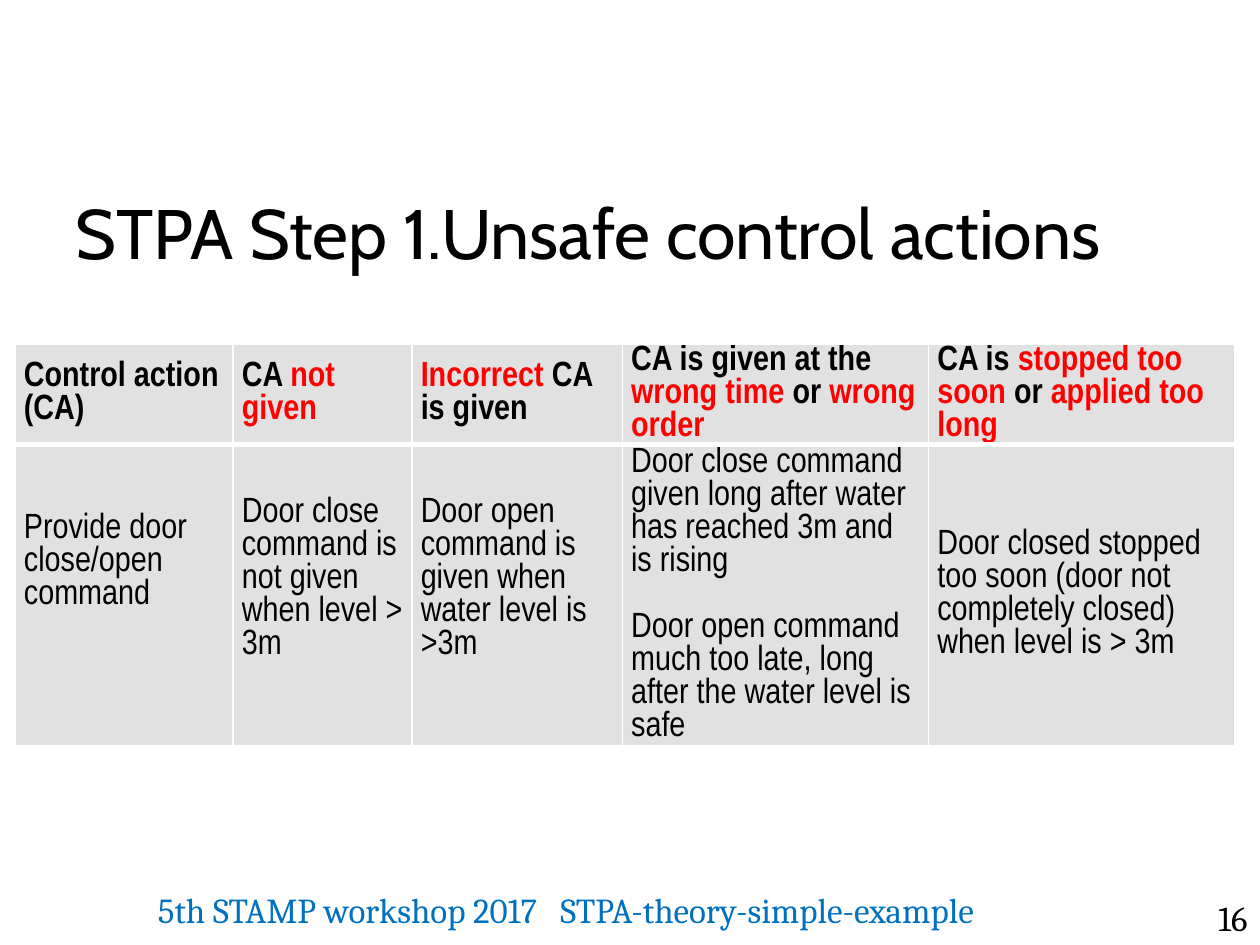
from lxml import etree
from pptx import Presentation
from pptx import util as u
from pptx.dml.color import RGBColor
from pptx.enum import text
from pptx.oxml import ns

COLORS = {"text": "000000", "alert": "FF0000", "cell": "D9D9D9", "border": "FFFFFF", "footer": "0070C0"}
LINE = 0.26


def style_run(run, font, size, color, bold=False):
    run.font.name = font
    run.font.size = u.Pt(size)
    run.font.bold = bold
    run.font.color.rgb = RGBColor.from_string(COLORS[color])


def add_border(properties, position, side, width):
    line = etree.Element(ns.qn(f"a:ln{side}"), w=str(u.Pt(width)))
    fill = etree.SubElement(line, ns.qn("a:solidFill"))
    etree.SubElement(fill, ns.qn("a:srgbClr"), val=COLORS["border"])
    properties.insert(position, line)


presentation = Presentation()
presentation.slide_width = u.Inches(10)
presentation.slide_height = u.Inches(7.5)
slide = presentation.slides.add_slide(presentation.slide_layouts[5])

title = slide.shapes.title
title.left, title.top = u.Inches(0.5), u.Inches(1.25)
title.width, title.height = u.Inches(9), u.Inches(1.17)
title.text_frame.text = "STPA Step 1.Unsafe control actions"
title.text_frame.vertical_anchor = text.MSO_ANCHOR.MIDDLE
title.text_frame.paragraphs[0].alignment = text.PP_ALIGN.LEFT
style_run(title.text_frame.paragraphs[0].runs[0], "Cabin", 40, "text")

headers = [
    [("Control action (CA)", "text")],
    [("CA ", "text"), ("not given", "alert")],
    [("Incorrect ", "alert"), ("CA is given", "text")],
    [("CA is given at the ", "text"), ("wrong time ", "alert"), ("or ", "text"), ("wrong order", "alert")],
    [("CA is ", "text"), ("stopped too soon", "alert"), (" or ", "text"), ("applied too long", "alert")],
]
actions = [
    ["Provide door close/open command"],
    ["Door close command is not given when level > 3m"],
    ["Door open command is given when water level is >3m"],
    ["Door close command given long after water has reached 3m and is rising",
     "Door open command much too late, long after the water level is safe"],
    ["Door closed stopped too soon (door not completely closed) when level is > 3m"],
]
table_rows = [
    [[header] for header in headers],
    [[[(line, "text")] for line in action] for action in actions],
]
column_widths = [1.73, 1.42, 1.67, 2.43, 2.43]
row_heights = [0.8, 2.39]
lines_above = [0, 0, 1, 0, 0]
lines_below = [2, 1, 2, 0, 0]

frame = slide.shapes.add_table(2, 5, u.Inches(0.12), u.Inches(2.73),
                               u.Inches(sum(column_widths)), u.Inches(sum(row_heights)))
table = frame.table
table.horz_banding = False
for column, width in zip(table.columns, column_widths):
    column.width = u.Inches(width)

for row_index, row in enumerate(table_rows):
    is_header = row_index == 0
    table.rows[row_index].height = u.Inches(row_heights[row_index])
    for column_index, paragraphs in enumerate(row):
        cell = table.cell(row_index, column_index)
        cell.vertical_anchor = text.MSO_ANCHOR.MIDDLE
        cell.margin_left = cell.margin_right = u.Inches(0.07)
        cell.margin_top = u.Inches(0 if is_header else lines_above[column_index] * LINE)
        cell.margin_bottom = u.Inches(0 if is_header else lines_below[column_index] * LINE)
        cell.fill.solid()
        cell.fill.fore_color.rgb = RGBColor.from_string(COLORS["cell"])
        properties = cell._tc.tcPr
        etree.SubElement(properties.find(".//" + ns.qn("a:srgbClr")), ns.qn("a:alpha"), val="79000")
        border_widths = {"L": 1, "R": 1, "T": 1 if is_header else 3, "B": 3 if is_header else 1}
        for position, (side, width) in enumerate(border_widths.items()):
            add_border(properties, position, side, width)
        for paragraph_index, runs in enumerate(paragraphs):
            if paragraph_index == 0:
                paragraph = cell.text_frame.paragraphs[0]
            else:
                paragraph = cell.text_frame.add_paragraph()
                paragraph.space_before = u.Inches(LINE)
            for content, color in runs:
                run = paragraph.add_run()
                run.text = content
                style_run(run, "Arial Narrow", 20, color, is_header)

footers = [
    ((9.17, 7.1, 0.83, 0.4), ["16"], "text", text.MSO_ANCHOR.BOTTOM),
    ((-0.83, 7, 8.66, 0.5), ["5th STAMP workshop 2017", " ", "STPA-theory-simple-example"],
     "footer", text.MSO_ANCHOR.TOP),
]
for bounds, contents, color, anchor in footers:
    box = slide.shapes.add_textbox(*(u.Inches(value) for value in bounds))
    box.text_frame.word_wrap = True
    box.text_frame.vertical_anchor = anchor
    paragraph = box.text_frame.paragraphs[0]
    paragraph.alignment = text.PP_ALIGN.RIGHT
    for content in contents:
        run = paragraph.add_run()
        run.text = content
        style_run(run, "Cambria", 20, color)
        if content == " ":
            run._r.get_or_add_rPr().set("spc", "880")

presentation.save("out.pptx")
